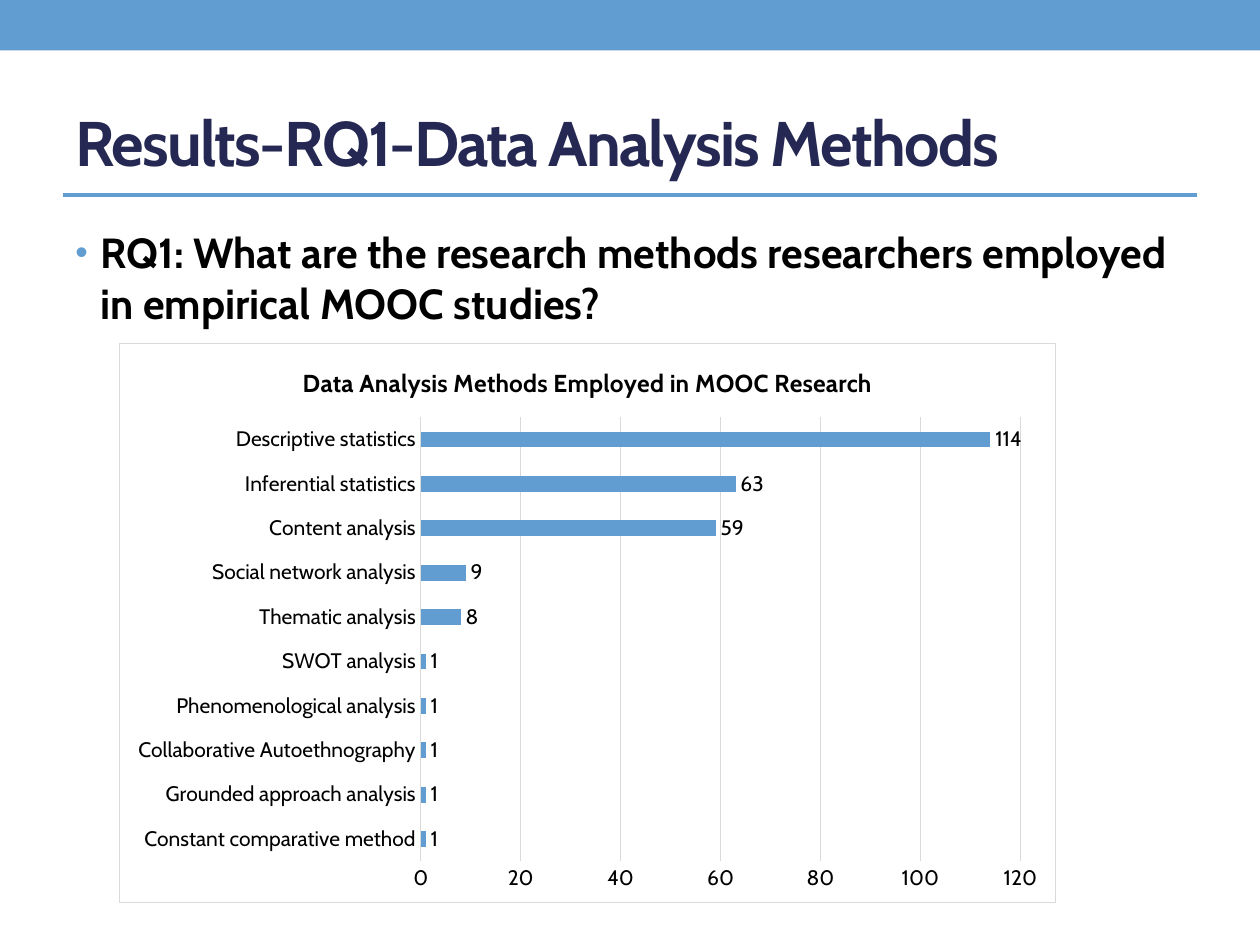
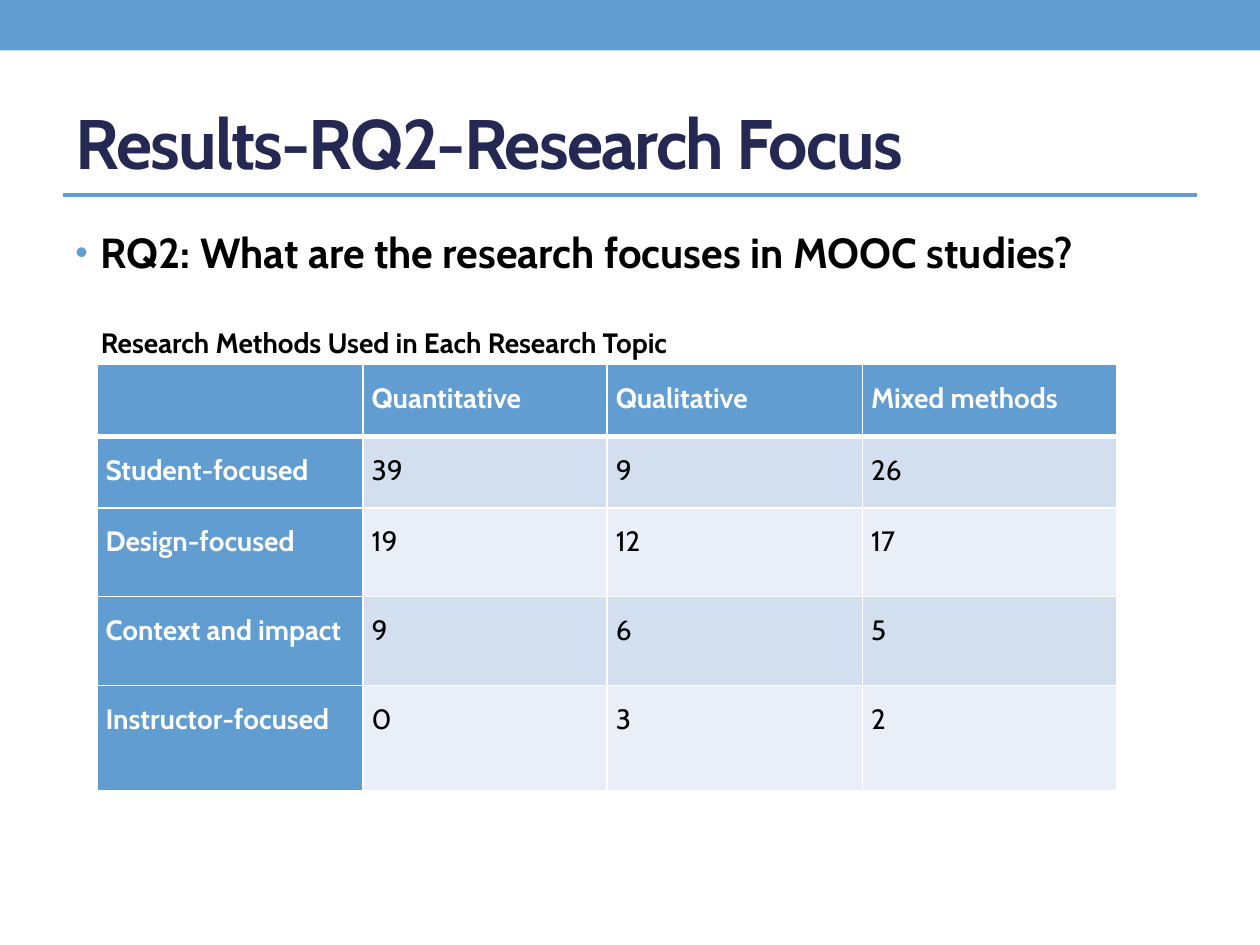
from lxml import etree
from pptx import Presentation
from pptx.chart import data
from pptx.dml.color import RGBColor
from pptx.enum import chart as kinds, shapes, text
from pptx.oxml import ns
from pptx.util import Pt

BLUE = RGBColor(0x62, 0x9D, 0xD1)
NAVY = RGBColor(0x24, 0x28, 0x52)
BLACK = RGBColor(0, 0, 0)
WHITE = RGBColor(255, 255, 255)
GREY = RGBColor(0xD9, 0xD9, 0xD9)
BANDS = [RGBColor(0xD3, 0xDF, 0xEE), RGBColor(0xEA, 0xEF, 0xF7)]
FACE = "Cabin"

METHODS = {
    "Constant comparative method": 1,
    "Grounded approach analysis": 1,
    "Collaborative Autoethnography": 1,
    "Phenomenological analysis": 1,
    "SWOT analysis": 1,
    "Thematic analysis": 8,
    "Social network analysis": 9,
    "Content analysis": 59,
    "Inferential statistics": 63,
    "Descriptive statistics": 114,
}
TOPICS = [
    ["", "Quantitative", "Qualitative", "Mixed methods"],
    ["Student-focused", "39", "9", "26"],
    ["Design-focused", "19", "12", "17"],
    ["Context and impact", "9", "6", "5"],
    ["Instructor-focused", "0", "3", "2"],
]


def put(obj, **vals):
    for name, val in vals.items():
        setattr(obj, name, val)


def node(base, tag, **attrs):
    return etree.SubElement(base, ns.qn(tag), attrs)


def paint(base, color):
    node(node(base, "a:solidFill"), "a:srgbClr", val=str(color))


class Deck:
    """Holds the shared style and the current slide."""

    def __init__(self):
        self.prs = Presentation()
        put(self.prs, slide_width=Pt(720), slide_height=Pt(540))

    def style(self, font, size, color=BLACK, bold=False):
        put(font, name=FACE, size=Pt(size), bold=bold)
        font.color.rgb = color

    def page(self, title, size, question):
        self.slide = self.prs.slides.add_slide(self.prs.slide_layouts[6])
        self.band()
        self.rule()
        para = self.label(title, (36, 42, 648, 77.5), size, NAVY, text.MSO_ANCHOR.MIDDLE)
        para.runs[0].font._element.set("spc", "-100")
        self.bullet(self.label(question, (36, 126, 648, 384), 24))

    def band(self):
        bar = self.slide.shapes.add_shape(
            shapes.MSO_SHAPE.RECTANGLE, 0, 0, self.prs.slide_width, Pt(28.8))
        bar.shadow.inherit = False
        bar.fill.solid()
        bar.fill.fore_color.rgb = BLUE
        bar.line.fill.background()

    def rule(self):
        line = self.slide.shapes.add_connector(
            shapes.MSO_CONNECTOR.STRAIGHT, Pt(36), Pt(111.5), Pt(684), Pt(111.5))
        line.line.color.rgb = BLUE
        line.line.width = Pt(2.08)
        node(line._element.spPr, "a:effectLst")

    def label(self, words, box, size, color=BLACK, anchor=text.MSO_ANCHOR.TOP, wrap=True):
        frame = self.slide.shapes.add_textbox(*map(Pt, box)).text_frame
        put(frame, word_wrap=wrap, vertical_anchor=anchor)
        para = frame.paragraphs[0]
        run = para.add_run()
        run.text = words
        self.style(run.font, size, color, True)
        return para

    def bullet(self, para):
        props = para._p.get_or_add_pPr()
        props.set("marL", str(Pt(14.4)))
        props.set("indent", str(Pt(-14.4)))
        node(node(props, "a:buClr"), "a:srgbClr", val=str(BLUE))
        node(props, "a:buSzPct", val="85000")
        node(props, "a:buFont", typeface="Arial")
        node(props, "a:buChar", char="•")

    def bars(self, title, vals, box):
        feed = data.CategoryChartData()
        feed.categories = list(vals)
        feed.add_series("Series 1", list(vals.values()))
        chart = self.slide.shapes.add_chart(
            kinds.XL_CHART_TYPE.BAR_CLUSTERED, *map(Pt, box), feed).chart
        self.style(chart.font, 12)
        put(chart, has_legend=False, has_title=True)
        head = chart.chart_title.text_frame
        head.text = title
        self.style(head.paragraphs[0].runs[0].font, 14, bold=True)

        plot = chart.plots[0]
        put(plot, gap_width=182, vary_by_categories=False, has_data_labels=True)
        put(plot.data_labels, show_value=True,
            position=kinds.XL_LABEL_POSITION.OUTSIDE_END)
        self.style(plot.data_labels.font, 12)
        fill = plot.series[0].format.fill
        fill.solid()
        fill.fore_color.rgb = BLUE

        cats, nums = chart.category_axis, chart.value_axis
        for axis in (cats, nums):
            put(axis, major_tick_mark=kinds.XL_TICK_MARK.NONE,
                minor_tick_mark=kinds.XL_TICK_MARK.NONE)
        put(cats, has_major_gridlines=False)
        put(nums, minimum_scale=0, maximum_scale=120, major_unit=20,
            has_major_gridlines=True)
        nums.format.line.fill.background()
        for form in (cats.format, nums.major_gridlines.format):
            form.line.color.rgb = GREY
            form.line.width = Pt(0.75)
        self.frame(chart)

    def frame(self, chart):
        root = chart.element
        area = node(root, "c:spPr")
        paint(area, WHITE)
        paint(node(area, "a:ln", w=str(Pt(0.75))), GREY)
        root.find(ns.qn("c:txPr")).addprevious(area)

    def grid(self, rows, spot, wides, highs):
        size = sum(wides), sum(highs)
        table = self.slide.shapes.add_table(
            len(rows), len(wides), *map(Pt, spot + size)).table
        put(table, first_row=False, horz_banding=False)
        for col, wide in zip(table.columns, wides):
            col.width = Pt(wide)
        for i, (row, high) in enumerate(zip(rows, highs)):
            table.rows[i].height = Pt(high)
            for j, words in enumerate(row):
                self.cell(table.cell(i, j), words, i, j)

    def cell(self, cell, words, i, j):
        head = i == 0 or j == 0
        put(cell, margin_left=Pt(5), margin_right=Pt(5), margin_top=0, margin_bottom=0)
        para = cell.text_frame.paragraphs[0]
        para.line_spacing = 1.5
        if words:
            run = para.add_run()
            run.text = words
            self.style(run.font, 16, WHITE if head else BLACK, head)
        thick = {0: "a:lnB", 1: "a:lnT"}.get(i)
        props = cell._tc.get_or_add_tcPr()
        for side in ("a:lnL", "a:lnR", "a:lnT", "a:lnB"):
            paint(node(props, side, w=str(Pt(3 if side == thick else 1))), WHITE)
        cell.fill.solid()
        cell.fill.fore_color.rgb = BLUE if head else BANDS[(i - 1) % 2]


def main():
    deck = Deck()
    deck.page("Results-RQ1-Data Analysis Methods", 36,
              "RQ1: What are the research methods researchers employed "
              "in empirical MOOC studies?")
    deck.bars("Data Analysis Methods Employed in MOOC Research", METHODS,
              (68, 196, 535.7, 320))

    deck.page("Results-RQ2-Research Focus", 40,
              "RQ2: What are the research focuses in MOOC studies?")
    deck.grid(TOPICS, (55.4, 208.3), (152, 139.5, 146, 145.5), (41, 41, 50.5, 51, 60))
    deck.label("Research Methods Used in Each Research Topic",
               (50.5, 182.2, 400, 46), 16, wrap=False)
    deck.prs.save("out.pptx")


if __name__ == "__main__":
    main()
